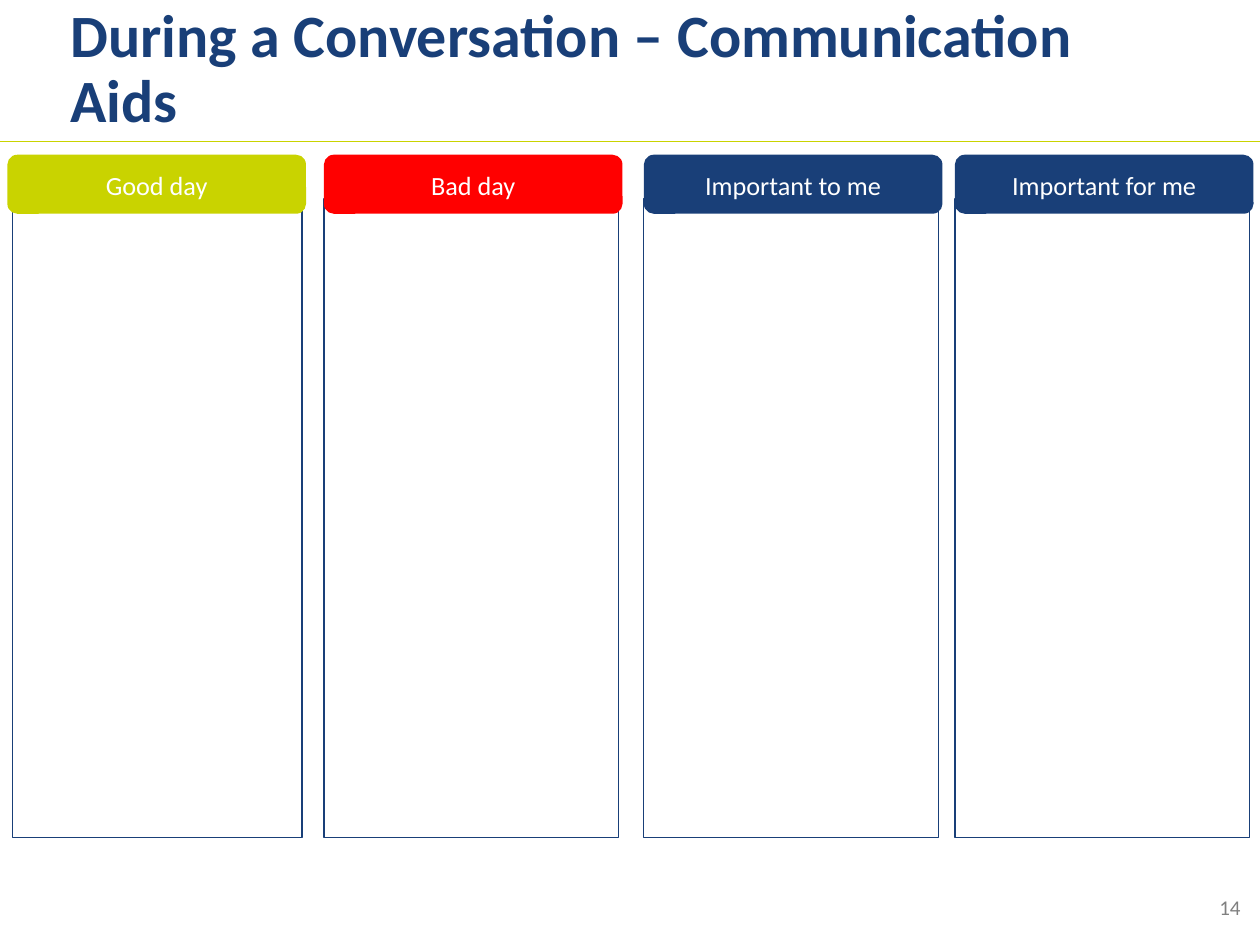
from dataclasses import dataclass

import pptx
import pptx.dml.color
import pptx.enum.shapes
import pptx.enum.text
import pptx.oxml.ns
import pptx.shapes.autoshape
import pptx.slide
import pptx.text.text
import pptx.util
from lxml import etree
from pptx.dml.color import RGBColor
from pptx.enum.shapes import MSO_SHAPE
from pptx.enum.text import MSO_ANCHOR, PP_ALIGN
from pptx.util import Cm

NAVY = RGBColor(0x19, 0x3F, 0x78)
LIME = RGBColor(0xC9, 0xD3, 0x00)
RED = RGBColor(0xFF, 0x00, 0x00)
WHITE = RGBColor(0xFF, 0xFF, 0xFF)
GREY = RGBColor(0x80, 0x80, 0x80)

FONT = "Calibri"
SLIDE_WIDTH = 25.4
RULE_TOP = 2.86
HEADER_TOP, HEADER_WIDTH, HEADER_HEIGHT = 3.12, 6.02, 1.19
PANEL_TOP, PANEL_HEIGHT = 4.01, 12.88


@dataclass(frozen=True)
class Column:
    heading: str
    colour: RGBColor
    left: float
    panel_inset: float = 0
    panel_width: float = 5.94


COLUMNS = [
    Column("Good day", LIME, 0.15, panel_inset=0.1, panel_width=5.84),
    Column("Bad day", RED, 6.53),
    Column("Important to me", NAVY, 12.98),
    Column("Important for me", NAVY, 19.25),
]


def write(
    frame: pptx.text.text.TextFrame,
    text: str,
    size: float,
    colour: RGBColor,
    align: PP_ALIGN = PP_ALIGN.LEFT,
    bold: bool = False,
) -> None:
    frame.text = text
    para = frame.paragraphs[0]
    para.alignment = align
    para.font.name = FONT
    para.font.size = pptx.util.Pt(size)
    para.font.bold = bold
    para.font.color.rgb = colour


def set_margins(
    frame: pptx.text.text.TextFrame, left: float, top: float, right: float, bottom: float
) -> None:
    frame.margin_left, frame.margin_top = Cm(left), Cm(top)
    frame.margin_right, frame.margin_bottom = Cm(right), Cm(bottom)


def add_title(page: pptx.slide.Slide, text: str) -> None:
    title = page.shapes.title
    title.left, title.top = Cm(1.42), Cm(0)
    title.width, title.height = Cm(22.35), Cm(RULE_TOP)
    frame = title.text_frame
    frame.word_wrap = True
    frame.auto_size = pptx.enum.text.MSO_AUTO_SIZE.NONE
    frame.vertical_anchor = MSO_ANCHOR.MIDDLE
    set_margins(frame, 0, 0, 0, 0)
    write(frame, text, 34.3, NAVY, bold=True)
    frame.paragraphs[0].line_spacing = 0.9


def add_rule(page: pptx.slide.Slide) -> None:
    rule = page.shapes.add_connector(
        pptx.enum.shapes.MSO_CONNECTOR.STRAIGHT,
        Cm(0), Cm(RULE_TOP), Cm(SLIDE_WIDTH), Cm(RULE_TOP),
    )
    rule.line.color.rgb = LIME
    rule.line.width = pptx.util.Pt(0.5)
    etree.SubElement(rule.element.spPr, pptx.oxml.ns.qn("a:effectLst"))


def add_box(
    page: pptx.slide.Slide,
    kind: MSO_SHAPE,
    left: float,
    top: float,
    width: float,
    height: float,
) -> pptx.shapes.autoshape.Shape:
    box = page.shapes.add_shape(kind, Cm(left), Cm(top), Cm(width), Cm(height))
    box.shadow.inherit = False
    return box


def add_column(page: pptx.slide.Slide, column: Column) -> None:
    panel = add_box(
        page, MSO_SHAPE.RECTANGLE, column.left + column.panel_inset,
        PANEL_TOP, column.panel_width, PANEL_HEIGHT,
    )
    panel.fill.background()
    panel.line.color.rgb = NAVY
    panel.line.width = pptx.util.Pt(0.75)

    header = add_box(
        page, MSO_SHAPE.ROUNDED_RECTANGLE, column.left,
        HEADER_TOP, HEADER_WIDTH, HEADER_HEIGHT,
    )
    header.fill.solid()
    header.fill.fore_color.rgb = column.colour
    header.line.fill.background()
    frame = header.text_frame
    frame.word_wrap = True
    frame.vertical_anchor = MSO_ANCHOR.MIDDLE
    set_margins(frame, 0.18, 0.15, 0.18, 0.1)
    write(frame, column.heading, 15, WHITE, PP_ALIGN.CENTER)


def add_page_number(page: pptx.slide.Slide, number: str) -> None:
    box = page.shapes.add_textbox(Cm(24.33), Cm(17.91), Cm(1.4), Cm(0.76))
    box.text_frame.word_wrap = True
    write(box.text_frame, number, 12, GREY)


def main() -> None:
    deck = pptx.Presentation()
    deck.slide_width, deck.slide_height = Cm(SLIDE_WIDTH), Cm(19.05)
    page = deck.slides.add_slide(deck.slide_layouts.get_by_name("Title Only"))
    add_page_number(page, "14")
    add_rule(page)
    add_title(page, "During a Conversation – Communication Aids")
    for column in COLUMNS:
        add_column(page, column)
    deck.save("out.pptx")


if __name__ == "__main__":
    main()
